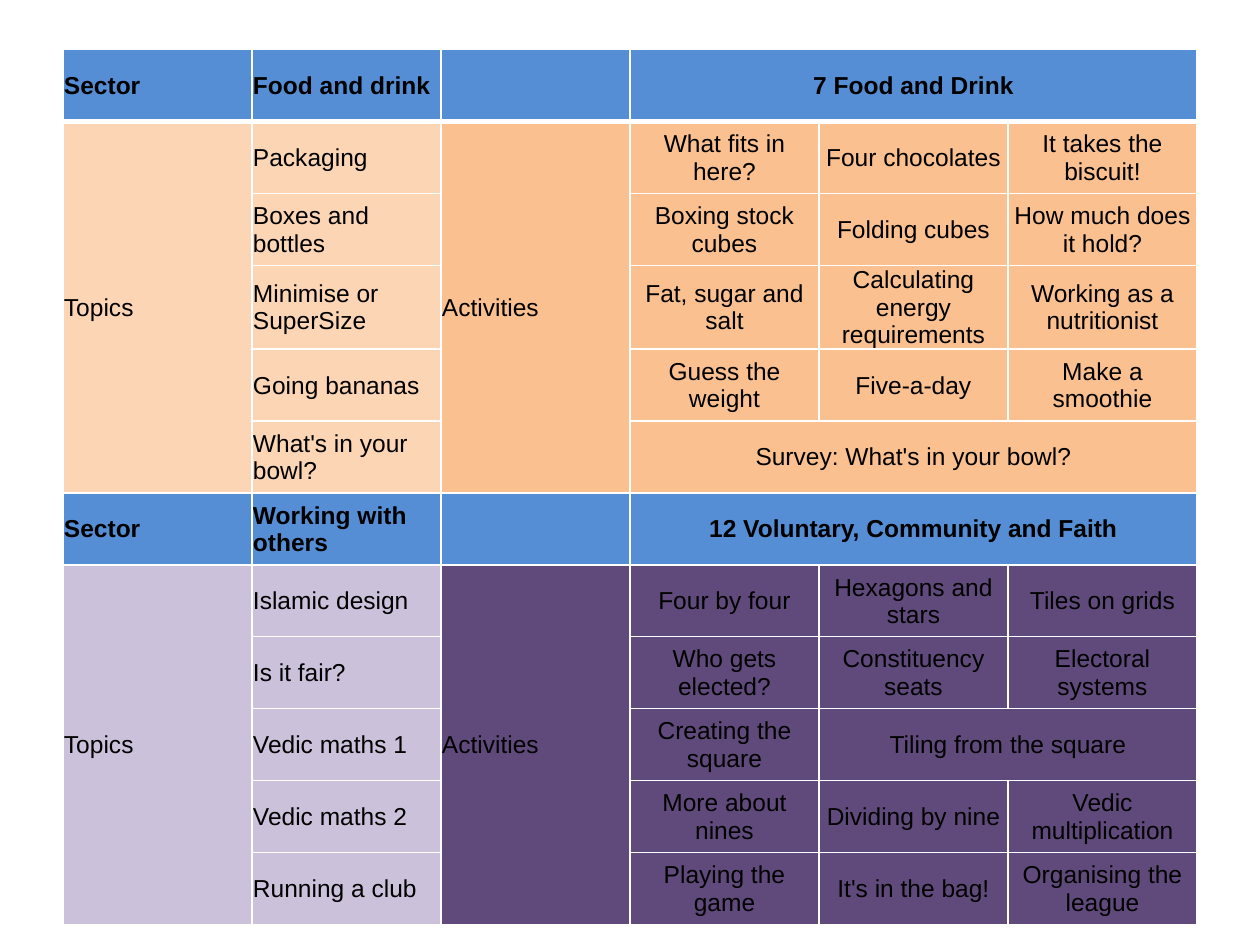
from dataclasses import dataclass

from lxml import etree
from pptx import Presentation
from pptx import util as u
from pptx.dml.color import RGBColor
from pptx.enum import text
from pptx.oxml.ns import qn

BLUE = RGBColor(0x55, 0x8E, 0xD5)
PEACH = RGBColor(0xFC, 0xD5, 0xB5)
ORANGE = RGBColor(0xFA, 0xC0, 0x90)
LILAC = RGBColor(0xCC, 0xC1, 0xDA)
PURPLE = RGBColor(0x60, 0x4A, 0x7B)
BLACK = RGBColor(0, 0, 0)
WHITE = RGBColor(0xFF, 0xFF, 0xFF)

COLS = 6
FIRST_ACTIVITY = 3
COL_WIDTH, ROW_HEIGHT = u.Cm(3.81), u.Cm(1.45)


@dataclass
class Sector:
    name: str
    title: str
    light: RGBColor
    dark: RGBColor
    topics: dict[str, list[str]]  # topic -> activities; the last one fills the row

    @property
    def height(self) -> int:
        return 1 + len(self.topics)


SECTORS = [
    Sector("Food and drink", "7 Food and Drink", PEACH, ORANGE, {
        "Packaging": ["What fits in here?", "Four chocolates", "It takes the biscuit!"],
        "Boxes and bottles": ["Boxing stock cubes", "Folding cubes",
                              "How much does it hold?"],
        "Minimise or SuperSize": ["Fat, sugar and salt", "Calculating energy requirements",
                                  "Working as a nutritionist"],
        "Going bananas": ["Guess the weight", "Five-a-day", "Make a smoothie"],
        "What's in your bowl?": ["Survey: What's in your bowl?"],
    }),
    Sector("Working with others", "12 Voluntary, Community and Faith", LILAC, PURPLE, {
        "Islamic design": ["Four by four", "Hexagons and stars", "Tiles on grids"],
        "Is it fair?": ["Who gets elected?", "Constituency seats", "Electoral systems"],
        "Vedic maths 1": ["Creating the square", "Tiling from the square"],
        "Vedic maths 2": ["More about nines", "Dividing by nine", "Vedic multiplication"],
        "Running a club": ["Playing the game", "It's in the bag!", "Organising the league"],
    }),
]


def set_borders(cell, top: float, bottom: float) -> None:
    tc_pr = cell._tc.get_or_add_tcPr()
    for tag, width in (("lnL", 1), ("lnR", 1), ("lnT", top), ("lnB", bottom)):
        ln = etree.SubElement(tc_pr, qn(f"a:{tag}"), w=str(u.Pt(width)))
        fill = etree.SubElement(ln, qn("a:solidFill"))
        etree.SubElement(fill, qn("a:srgbClr"), val=str(WHITE))


def format_cell(cell, fill: RGBColor, row: int) -> None:
    set_borders(cell, 3 if row == 1 else 1, 3 if row == 0 else 1)
    cell.fill.solid()
    cell.fill.fore_color.rgb = fill
    cell.vertical_anchor = text.MSO_ANCHOR.MIDDLE
    cell.margin_left = cell.margin_right = cell.margin_top = u.Cm(0.02)
    cell.margin_bottom = 0


def write(cell, words: str, bold: bool = False, centred: bool = False) -> None:
    p = cell.text_frame.paragraphs[0]
    p.alignment = text.PP_ALIGN.CENTER if centred else text.PP_ALIGN.LEFT
    r = p.add_run()
    r.text = words
    r.font.name, r.font.size = "Arial", u.Pt(14)
    r.font.bold = bold
    r.font.color.rgb = BLACK


def merge(table, top: int, left: int, bottom: int, right: int) -> None:
    if (top, left) != (bottom, right):
        table.cell(top, left).merge(table.cell(bottom, right))


def add_sector(table, sector: Sector, top: int) -> None:
    last = top + sector.height - 1
    for row in range(top, last + 1):
        for col in range(COLS):
            body = sector.light if col < 2 else sector.dark
            format_cell(table.cell(row, col), BLUE if row == top else body, row)

    # Heading row
    write(table.cell(top, 0), "Sector", bold=True)
    write(table.cell(top, 1), sector.name, bold=True)
    write(table.cell(top, FIRST_ACTIVITY), sector.title, bold=True, centred=True)
    merge(table, top, FIRST_ACTIVITY, top, COLS - 1)

    # Tall label cells
    for col, label in ((0, "Topics"), (2, "Activities")):
        write(table.cell(top + 1, col), label)
        merge(table, top + 1, col, last, col)

    # Topics with their activities
    for row, (topic, activities) in enumerate(sector.topics.items(), top + 1):
        write(table.cell(row, 1), topic)
        for col, activity in enumerate(activities, FIRST_ACTIVITY):
            write(table.cell(row, col), activity, centred=True)
        merge(table, row, col, row, COLS - 1)


def main() -> None:
    prs = Presentation()
    prs.slide_width, prs.slide_height = u.Cm(25.4), u.Cm(19.05)
    s = prs.slides.add_slide(prs.slide_layouts[6])

    rows = sum(sector.height for sector in SECTORS)
    table = s.shapes.add_table(rows, COLS, u.Cm(1.27), u.Cm(1),
                               COL_WIDTH * COLS, ROW_HEIGHT * rows).table
    table.horz_banding = False

    top = 0
    for sector in SECTORS:
        add_sector(table, sector, top)
        top += sector.height

    prs.save("out.pptx")


if __name__ == "__main__":
    main()
